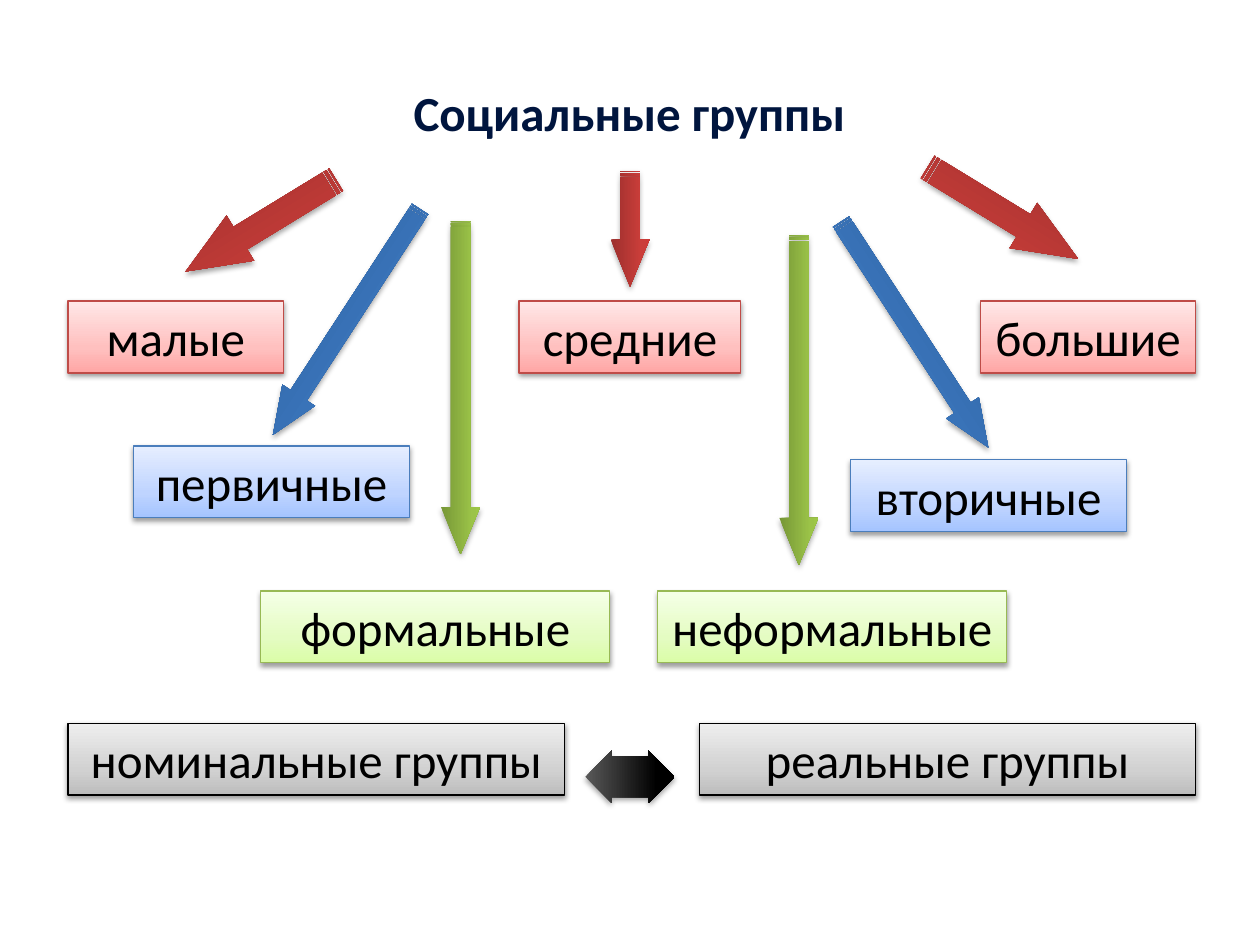
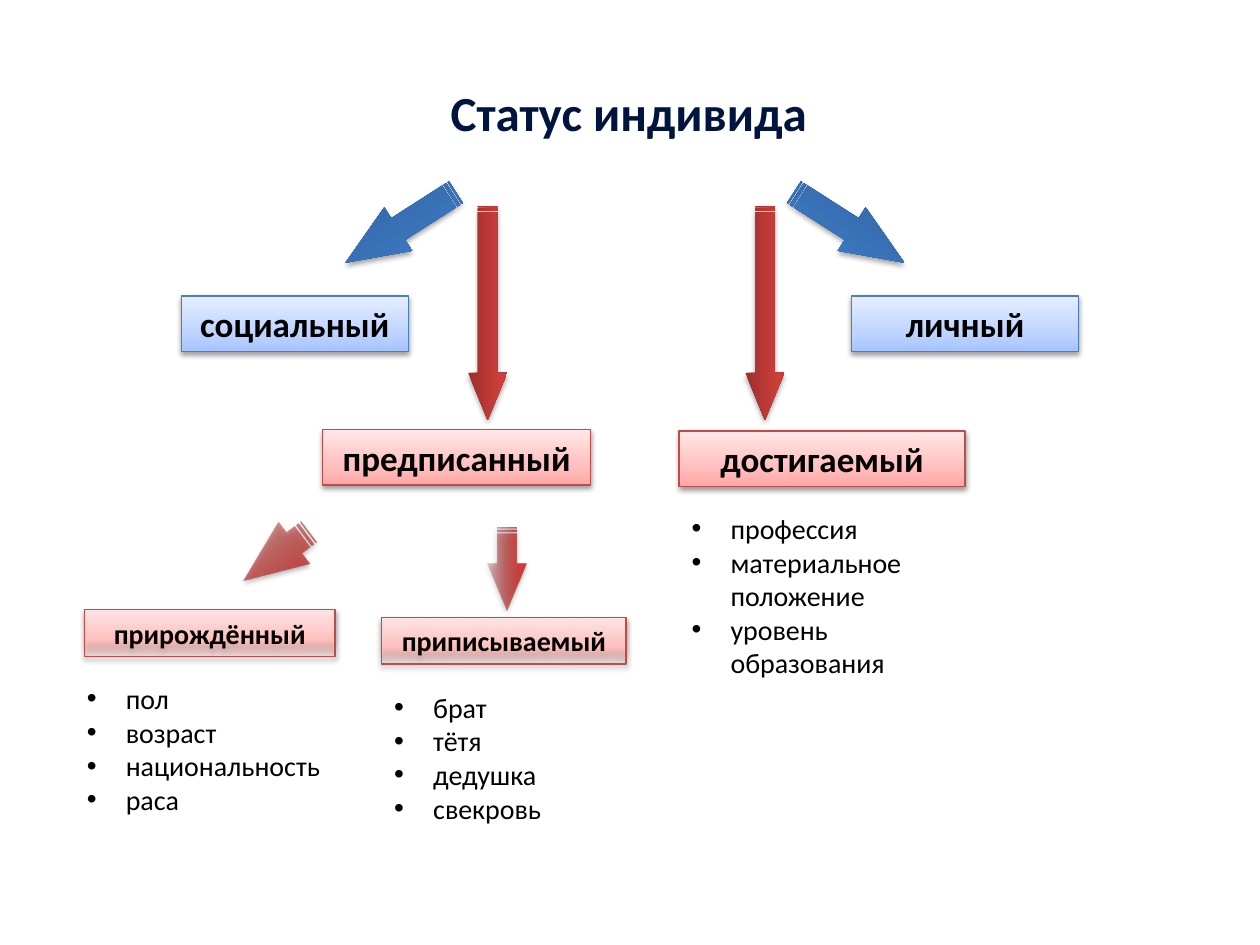
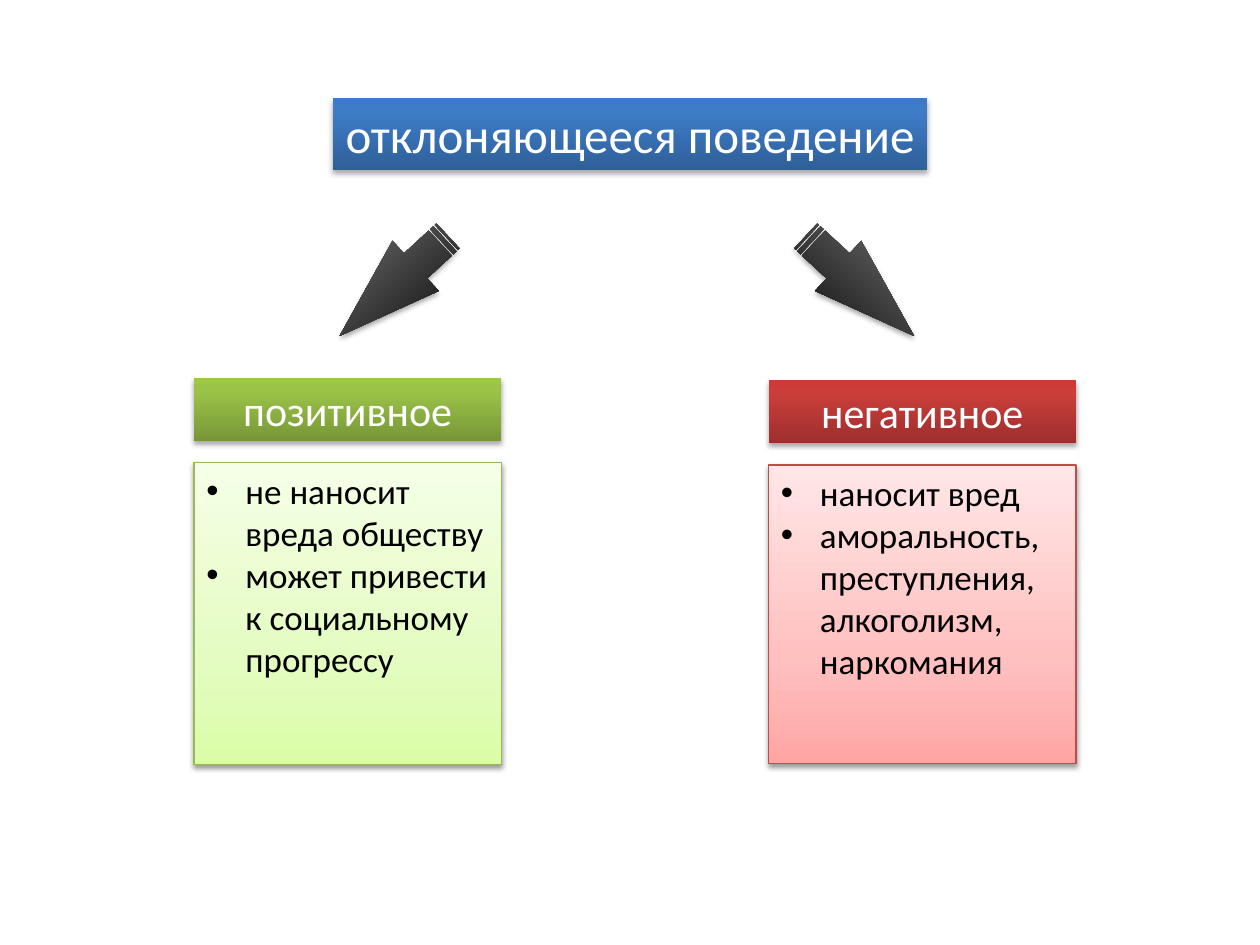
from lxml.etree import SubElement
from pptx import Presentation
from pptx.dml.color import RGBColor
from pptx.enum.shapes import MSO_SHAPE
from pptx.enum.text import MSO_ANCHOR, MSO_AUTO_SIZE, PP_ALIGN
from pptx.oxml.ns import qn
from pptx.util import Inches, Pt

FONT = "Calibri"
TITLE_ONLY = 5
COLORS = {"title": "00153E", "dark text": "000000", "light text": "FFFFFF",
          "pale red": "BF4C48", "pale blue": "4B7EBC",
          "pale green": "98B955", "pale gray": "000000"}

# Gradient stops run from bottom to top: position, colour, opacity in percent
GRADIENTS = {
    "red": [(0, "9C2F2D", 100), (80, "CB3E3A", 100), (100, "CE3B37", 100)],
    "blue": [(0, "2F5F99", 100), (80, "3D7CC7", 100), (100, "3A7CCB", 100)],
    "green": [(0, "779737", 100), (80, "9BC348", 100), (100, "9DC746", 100)],
    "black": [(0, "595959", 100), (80, "000000", 100), (100, "000000", 100)],
    "gray": [(0, "808080", 100), (95, "000000", 100), (100, "000000", 100)],
    "faded red": [(0, "9C2F2D", 27), (80, "CB3E3A", 100), (100, "CE3B37", 100)],
    "pale red": [(0, "FFA6A5", 100), (35, "FFC0BF", 100), (100, "FFE7E7", 100)],
    "pale blue": [(0, "A4C4FF", 100), (35, "BFD4FF", 100), (100, "E6EEFF", 100)],
    "pale green": [(0, "DAFDA7", 100), (35, "E4FCC2", 100), (100, "F5FFE7", 100)],
    "pale gray": [(0, "BDBDBD", 100), (35, "D1D1D1", 100), (100, "EEEEEE", 100)],
    "pale faded red": [(0, "FFA6A5", 3), (35, "FFC0BF", 100), (100, "FFE7E7", 100)],
}
COLORS["pale faded red"] = COLORS["pale red"]

# Places are (left, top, width, height) on a grid of 100 columns and 75 rows.
# Arrows: style, place, rotation, mirrored. Boxes: style, place, text.
# Lists: place, items.
SLIDES = [
    {
        "title": "Социальные группы", "title place": (10.6, 6, 78.7, 5.7),
        "title style": None, "box size": 28, "box bold": False,
        "list size": 16, "head": 1.212,
        "arrows": [
            ("red", (13.7, 15.8, 14, 4.2), 148.6, False),
            ("red", (45.4, 16.6, 9.2, 3.1), 90, False),
            ("red", (72.6, 14.8, 14, 4.2), 148.6, True),
            ("blue", (16.8, 24, 21.4, 3.1), 123.1, False),
            ("blue", (61.9, 25, 21.4, 3.1), 123.1, True),
            ("green", (23.3, 29.2, 26.5, 3.1), 90, False),
            ("green", (50.3, 30.2, 26.2, 3.1), 90, False),
            ("black", (47.9, 58.1, 4.2, 7.1), 90, False),
        ],
        "boxes": [
            ("pale red", (5.4, 23.9, 17.1, 5.7), "малые"),
            ("pale red", (41.2, 23.9, 17.6, 5.7), "средние"),
            ("pale red", (77.8, 23.9, 17.1, 5.7), "большие"),
            ("pale blue", (10.6, 35.4, 21.9, 5.7), "первичные"),
            ("pale blue", (67.5, 36.5, 21.9, 5.7), "вторичные"),
            ("pale green", (20.7, 46.9, 27.7, 5.7), "формальные"),
            ("pale green", (52.2, 46.9, 27.7, 5.7), "неформальные"),
            ("pale gray", (5.4, 57.4, 39.4, 5.7), "номинальные группы"),
            ("pale gray", (55.5, 57.4, 39.4, 5.7), "реальные группы"),
        ],
        "lists": [],
    },
    {
        "title": "Статус индивида", "title place": (18.8, 6, 62.2, 5.7),
        "title style": None, "box size": 20, "box bold": True,
        "list size": 16, "head": 1.212,
        "arrows": [
            ("blue", (26.6, 16, 10.4, 4.1), 147.4, False),
            ("blue", (62.2, 16, 10.4, 4.1), 147.4, True),
            ("red", (30.2, 23.3, 17, 3.1), 90, False),
            ("red", (52.2, 23.3, 17, 3.1), 90, False),
            ("faded red", (18.7, 42.1, 6.4, 4.1), 143.2, False),
            ("faded red", (36.9, 43.6, 6.6, 3.1), 90, False),
        ],
        "boxes": [
            ("pale blue", (14.4, 23.5, 18, 4.4), "социальный"),
            ("pale blue", (67.6, 23.5, 18, 4.4), "личный"),
            ("pale red", (25.6, 34.1, 21.3, 4.4), "предписанный"),
            ("pale red", (53.9, 34.2, 22.7, 4.4), "достигаемый"),
            ("pale faded red", (6.7, 48.4, 19.9, 3.7), "прирождённый"),
            ("pale faded red", (30.3, 49, 19.4, 3.7), "приписываемый"),
        ],
        "lists": [
            ((5.9, 53.6, 22.1, 11.8),
             ["пол", "возраст", "национальность", "раса"]),
            ((30.3, 54.3, 20.8, 11.8), ["брат", "тётя", "дедушка", "свекровь"]),
            ((53.9, 40.1, 24.5, 14.5),
             ["профессия", "материальное положение", "уровень образования"]),
        ],
    },
    {
        "title": "отклоняющееся поведение", "title place": (26.4, 7.8, 47.2, 5.7),
        "title style": "blue", "box size": 24, "box bold": False,
        "list size": 20, "head": 1.518,
        "arrows": [
            ("gray", (25.4, 20, 11.7, 5.4), 137.3, False),
            ("gray", (62.4, 20, 11.7, 5.4), 137.3, True),
        ],
        "boxes": [
            ("green", (15.4, 30, 24.4, 5), "позитивное"),
            ("red", (61, 30.2, 24.4, 5), "негативное"),
            ("pale green", (15.4, 36.7, 24.4, 24), ""),
            ("pale red", (61, 36.9, 24.4, 23.7), ""),
        ],
        "lists": [
            ((15.4, 36.8, 24.4, 17.8),
             ["не наносит вреда обществу",
              "может привести к социальному прогрессу"]),
            ((61, 36.9, 24.4, 17.8),
             ["наносит вред",
              "аморальность, преступления, алкоголизм, наркомания"]),
        ],
    },
]


def paint(shape, style):
    """Give a shape its gradient, outline and soft shadow."""
    pale = style.startswith("pale")
    shape.fill.gradient()
    shape.fill.gradient_angle = 90
    properties = shape._element.spPr
    stops = properties.find(qn("a:gradFill")).find(qn("a:gsLst"))
    for stop in list(stops):
        stops.remove(stop)
    for position, color, opacity in GRADIENTS[style]:
        stop = SubElement(stops, qn("a:gs"), pos=str(position * 1000))
        stop_color = SubElement(stop, qn("a:srgbClr"), val=color)
        if opacity < 100:
            SubElement(stop_color, qn("a:alpha"), val=str(opacity * 1000))
    if pale:
        shape.line.color.rgb = RGBColor.from_string(COLORS[style])
        shape.line.width = Pt(0.75)
    else:
        shape.line.fill.background()
    shape.shadow.inherit = False
    shadow = SubElement(properties.find(qn("a:effectLst")), qn("a:outerShdw"),
                        blurRad=str(Pt(3.1)), dist=str(Pt(1.6 if pale else 1.8)),
                        dir="5400000", rotWithShape="0")
    shadow_color = SubElement(shadow, qn("a:srgbClr"), val="000000")
    SubElement(shadow_color, qn("a:alpha"), val="38000" if pale else "35000")


def write(shape, lines, size, color, bold=False, bulleted=False):
    """Fill a shape with centred lines or with a bulleted list."""
    frame = shape.text_frame
    frame.word_wrap = bulleted
    frame.auto_size = MSO_AUTO_SIZE.NONE
    frame.vertical_anchor = MSO_ANCHOR.TOP if bulleted else MSO_ANCHOR.MIDDLE
    frame.margin_left = frame.margin_right = Inches(0.1)
    frame.margin_top = frame.margin_bottom = Inches(0.05)
    frame.text = "\n".join(lines)
    for paragraph in frame.paragraphs:
        paragraph.alignment = PP_ALIGN.LEFT if bulleted else PP_ALIGN.CENTER
        if bulleted:
            settings = paragraph._p.get_or_add_pPr()
            settings.set("marL", str(Inches(0.31)))
            settings.set("indent", str(-Inches(0.31)))
            SubElement(settings, qn("a:buFont"), typeface="Arial")
            SubElement(settings, qn("a:buChar"), char="•")
        paragraph.font.name = FONT
        paragraph.font.size = Pt(size)
        paragraph.font.bold = bold
        paragraph.font.color.rgb = RGBColor.from_string(COLORS[color])


presentation = Presentation()
presentation.slide_width = Inches(10)
presentation.slide_height = Inches(7.5)
column = presentation.slide_width / 100
row = presentation.slide_height / 75

for content in SLIDES:
    slide = presentation.slides.add_slide(presentation.slide_layouts[TITLE_ONLY])

    # Title
    title = slide.shapes.title
    left, top, width, height = content["title place"]
    title.left, title.width = int(left * column), int(width * column)
    title.top, title.height = int(top * row), int(height * row)
    if content["title style"]:
        paint(title, content["title style"])
        write(title, [content["title"]], 28, "light text")
    else:
        write(title, [content["title"]], 28, "title", bold=True)

    # Arrows
    for style, (left, top, width, height), rotation, mirrored in content["arrows"]:
        two_headed = style == "black"
        arrow = slide.shapes.add_shape(
            MSO_SHAPE.UP_DOWN_ARROW if two_headed else MSO_SHAPE.STRIPED_RIGHT_ARROW,
            int(left * column), int(top * row), int(width * column), int(height * row))
        arrow.adjustments[0] = 0.5
        arrow.adjustments[1] = 0.767 if two_headed else content["head"]
        arrow.rotation = 360 - rotation if mirrored else rotation
        if mirrored:
            arrow._element.spPr.find(qn("a:xfrm")).set("flipH", "1")
        paint(arrow, style)

    # Boxes
    for style, (left, top, width, height), text in content["boxes"]:
        box = slide.shapes.add_shape(
            MSO_SHAPE.RECTANGLE,
            int(left * column), int(top * row), int(width * column), int(height * row))
        paint(box, style)
        if text:
            color = "dark text" if style.startswith("pale") else "light text"
            size = 16 if style == "pale faded red" else content["box size"]
            write(box, [text], size, color, bold=content["box bold"])

    # Bulleted lists
    for (left, top, width, height), items in content["lists"]:
        text_box = slide.shapes.add_textbox(
            int(left * column), int(top * row), int(width * column), int(height * row))
        write(text_box, items, content["list size"], "dark text", bulleted=True)

presentation.save("out.pptx")
